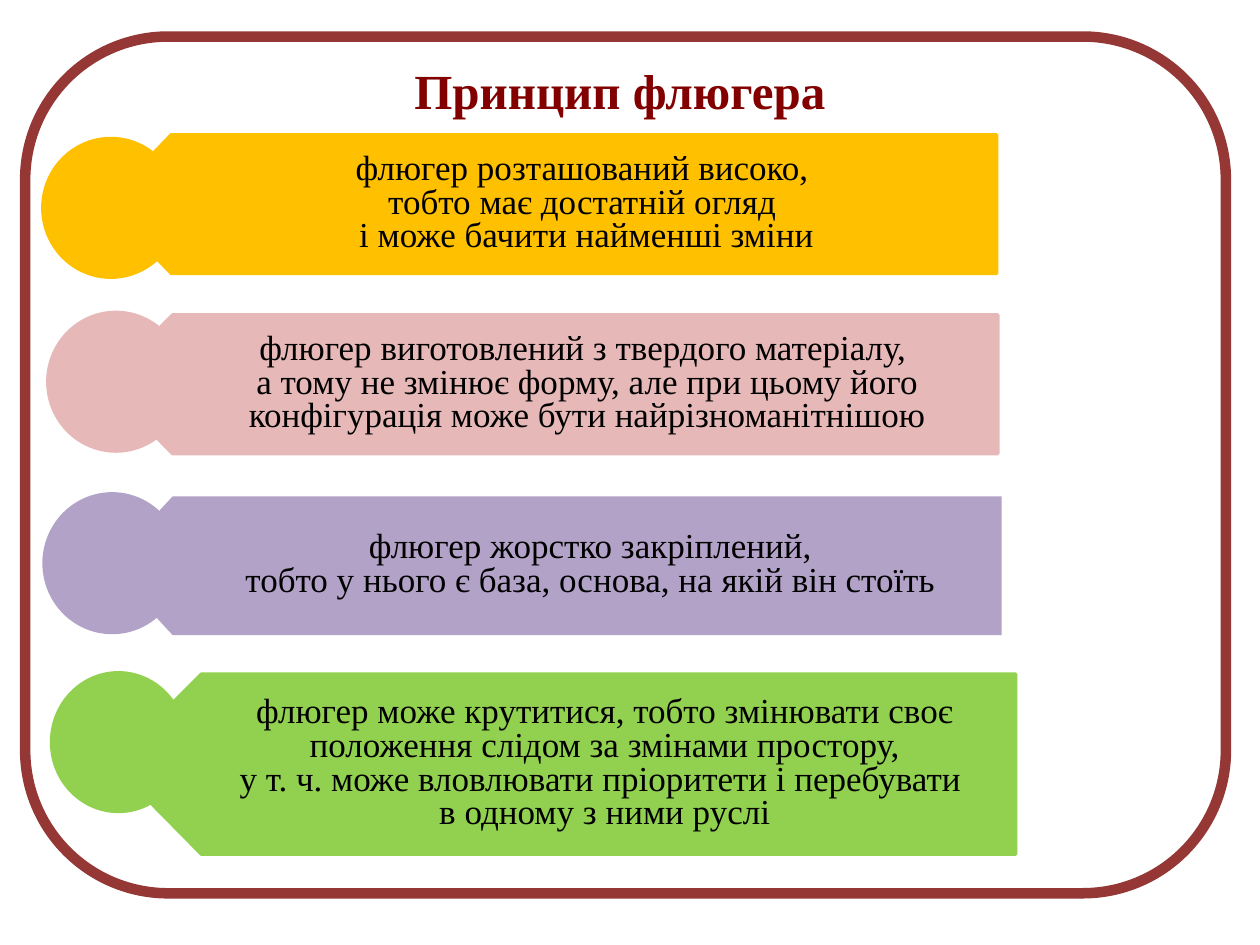
from dataclasses import dataclass

from lxml import etree
from pptx import Presentation
from pptx import util as u
from pptx.dml.color import RGBColor
from pptx.enum import shapes, text
from pptx.oxml.ns import qn

PX = 9144
FONT = "Times New Roman"


@dataclass
class Band:
    left: int
    top: int
    right: int
    height: int
    notch: int
    inset: int
    circle_left: int
    circle_top: int
    circle_width: int
    color: str
    outlined: bool
    lines: list[str]


BANDS = [
    Band(83, 107, 791, 110, 53, 73, 34, 110, 108, "FFC000", True, [
        "флюгер розташований високо, ",
        "тобто має достатній огляд ",
        "і може бачити найменші зміни",
    ]),
    Band(83, 250, 792, 110, 54, 73, 38, 248, 108, "E6B9B8", True, [
        "флюгер виготовлений з твердого матеріалу, ",
        "а тому не змінює форму, але при цьому його "
        "конфігурація може бути найрізноманітнішою",
    ]),
    Band(86, 394, 795, 110, 51, 72, 35, 392, 108, "B3A2C7", False, [
        " флюгер жорстко закріплений, ",
        "тобто у нього є база, основа, на якій він стоїть",
    ]),
    Band(89, 535, 806, 143, 71, 81, 41, 534, 106, "92D050", True, [
        "флюгер може крутитися, тобто змінювати своє",
        " положення слідом за змінами простору, ",
        "у т. ч. може вловлювати пріоритети і перебувати ",
        "в одному з ними руслі",
    ]),
]


def px(n: int) -> u.Emu:
    return u.Emu(n * PX)


def rgb(color: str) -> RGBColor:
    return RGBColor.from_string(color)


def paint(sp, fill: str, line: str | None, width: int = 2) -> None:
    sp.shadow.inherit = False
    sp.fill.solid()
    sp.fill.fore_color.rgb = rgb(fill)
    if line:
        sp.line.color.rgb = rgb(line)
        sp.line.width = u.Pt(width)
    else:
        sp.line.fill.background()


def style(p, size: int, color: str, bold: bool = False) -> None:
    for r in p.runs:
        r.font.name = FONT
        r.font.size = u.Pt(size)
        r.font.bold = bold
        r.font.color.rgb = rgb(color)


def add_frame(s) -> None:
    sp = s.shapes.add_shape(shapes.MSO_SHAPE.ROUNDED_RECTANGLE,
                            px(20), px(29), px(953), px(680))
    sp.adjustments[0] = 0.167
    paint(sp, "FFFFFF", "953734", 6)
    fill = sp.fill._xPr.find(qn("a:solidFill"))
    etree.SubElement(fill[0], qn("a:alpha")).set("val", "90000")


def add_title(s) -> None:
    sp = s.shapes.add_textbox(px(319), px(43), px(361), px(57))
    tf = sp.text_frame
    tf.word_wrap = False
    tf.auto_size = text.MSO_AUTO_SIZE.SHAPE_TO_FIT_TEXT
    tf.text = "Принцип флюгера"
    style(tf.paragraphs[0], 28, "820000", True)


def add_band(s, b: Band) -> None:
    shoulder, bottom = b.left + b.notch, b.top + b.height
    line = b.color if b.outlined else None
    fb = s.shapes.build_freeform(b.right, bottom, scale=PX)
    fb.add_line_segments([
        (shoulder, bottom), (b.left, b.top + b.height // 2),
        (shoulder, b.top), (b.right, b.top),
    ], close=True)
    sp = fb.convert_to_shape()
    paint(sp, b.color, line)
    tf = sp.text_frame
    tf.word_wrap = True
    tf.vertical_anchor = text.MSO_ANCHOR.MIDDLE
    tf.margin_left, tf.margin_right = px(b.inset), px(16)
    tf.margin_top = tf.margin_bottom = px(8)
    tf.text = "\n".join(b.lines)
    for p in tf.paragraphs:
        p.alignment = text.PP_ALIGN.CENTER
        p.line_spacing = 0.8
        style(p, 20, "000000")

    circle = s.shapes.add_shape(shapes.MSO_SHAPE.OVAL, px(b.circle_left),
                                px(b.circle_top), px(b.circle_width), px(110))
    paint(circle, b.color, b.color)


def main() -> None:
    prs = Presentation()
    prs.slide_width, prs.slide_height = px(1000), px(750)
    s = prs.slides.add_slide(prs.slide_layouts[6])
    add_frame(s)
    add_title(s)
    for band in BANDS:
        add_band(s, band)
    prs.save("out.pptx")


if __name__ == "__main__":
    main()
